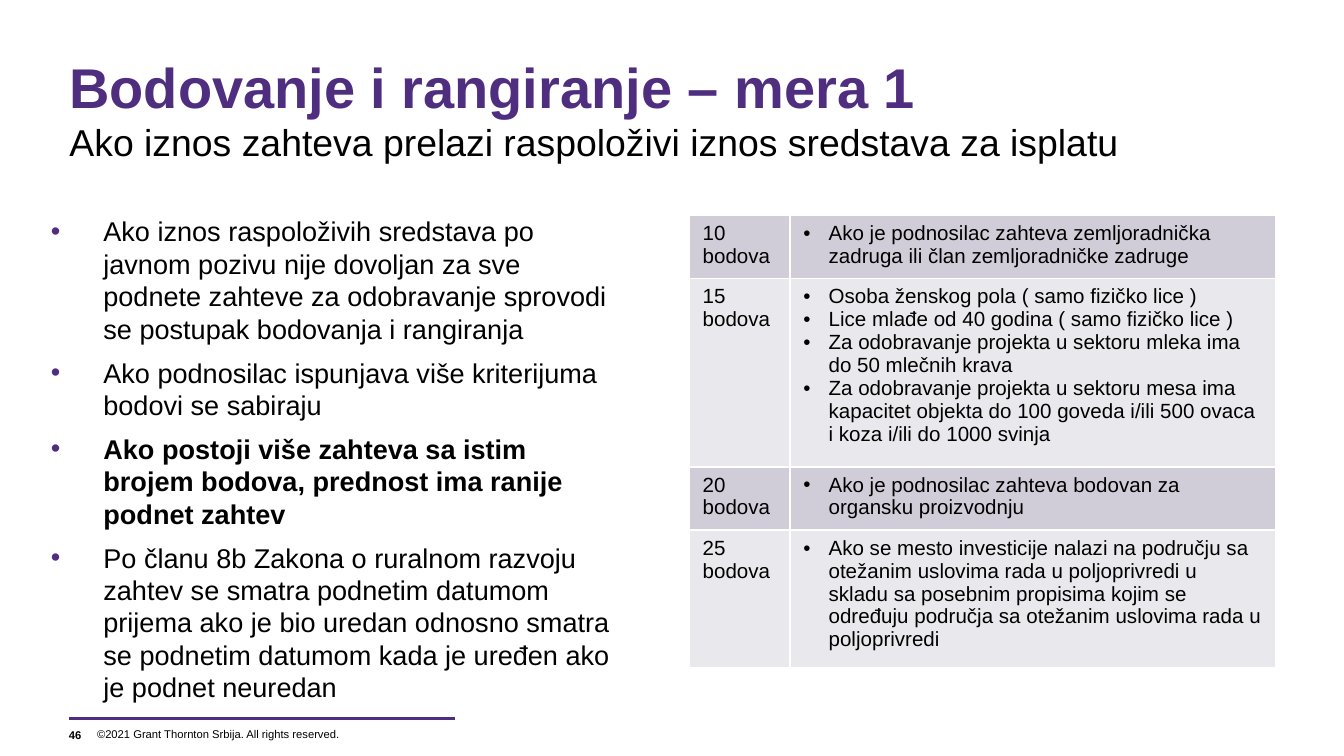
import pptx
import pptx.dml.color
import pptx.enum.shapes
import pptx.enum.text
import pptx.oxml
import pptx.oxml.ns
import pptx.util
from dataclasses import dataclass
from typing import Any

Pt = pptx.util.Pt
ANCHOR = pptx.enum.text.MSO_ANCHOR
FONT = "Arial"
PURPLE, BLACK, WHITE = "4F2D7F", "000000", "FFFFFF"
BANDS = ("D0CDD8", "E9E8EC")


@dataclass
class Box:
    left: float
    top: float
    width: float
    height: float

    def lengths(self) -> list[int]:
        return [Pt(n) for n in (self.left, self.top, self.width, self.height)]


@dataclass
class Point:
    text: str
    bold: bool = False


@dataclass
class Score:
    label: str
    rules: list[str]
    height: float


POINTS = [
    Point("Ako iznos raspoloživih sredstava po javnom pozivu nije dovoljan za sve "
          "podnete zahteve za odobravanje sprovodi se postupak bodovanja i rangiranja"),
    Point("Ako podnosilac ispunjava više kriterijuma bodovi se sabiraju"),
    Point("Ako postoji više zahteva sa istim brojem bodova, prednost ima ranije "
          "podnet zahtev", True),
    Point("Po članu 8b Zakona o ruralnom razvoju zahtev se smatra podnetim datumom "
          "prijema ako je bio uredan odnosno smatra se podnetim datumom kada je uređen "
          "ako je podnet neuredan"),
]

SCORES = [
    Score("10 bodova", ["Ako je podnosilac zahteva zemljoradnička zadruga ili član "
                        "zemljoradničke zadruge"], 33.9),
    Score("15 bodova", ["Osoba ženskog pola ( samo fizičko lice )",
                        "Lice mlađe od 40 godina ( samo fizičko lice )",
                        "Za odobravanje projekta u sektoru mleka ima do 50 mlečnih krava",
                        "Za odobravanje projekta u sektoru mesa ima kapacitet objekta do "
                        "100 goveda i/ili 500 ovaca i koza i/ili do 1000 svinja"], 100.8),
    Score("20 bodova", ["Ako je podnosilac zahteva bodovan za organsku proizvodnju"], 33.9),
    Score("25 bodova", ["Ako se mesto investicije nalazi na području sa otežanim uslovima "
                        "rada u poljoprivredi u skladu sa posebnim propisima kojim se "
                        "određuju područja sa otežanim uslovima rada u poljoprivredi"], 74),
]


def color(code: str) -> pptx.dml.color.RGBColor:
    return pptx.dml.color.RGBColor.from_string(code)


def style(run: Any, size: float, code: str = BLACK, bold: bool = False) -> None:
    run.font.name = FONT
    run.font.size = Pt(size)
    run.font.bold = bold
    run.font.color.rgb = color(code)


def add(parent: Any, tag: str, **attrs: str) -> Any:
    node = pptx.oxml.parse_xml(f'<{tag} {pptx.oxml.ns.nsdecls("a")}/>')
    for name, value in attrs.items():
        node.set(name, value)
    parent.append(node)
    return node


def bullet(para: Any, indent: float, code: str) -> None:
    props = para._p.get_or_add_pPr()
    props.set("marL", str(Pt(indent)))
    props.set("indent", str(-Pt(indent)))
    add(add(props, "a:buClr"), "a:srgbClr", val=code)
    add(props, "a:buFont", typeface=FONT)
    add(props, "a:buChar", char="•")


def add_text(slide: Any, box: Box, text: str, inset: tuple[float, float] = (0, 0),
             anchor: Any = ANCHOR.TOP) -> Any:
    frame = slide.shapes.add_textbox(*box.lengths()).text_frame
    frame.word_wrap = True
    frame.margin_left = frame.margin_right = Pt(inset[0])
    frame.margin_top = frame.margin_bottom = Pt(inset[1])
    frame.vertical_anchor = anchor
    frame.text = text
    return frame


def add_points(slide: Any, box: Box, points: list[Point]) -> None:
    text = "\n".join(point.text for point in points)
    frame = add_text(slide, box, text, (7.2, 3.6))
    for para, point in zip(frame.paragraphs, points):
        bullet(para, 28.1, PURPLE)
        para.space_after = Pt(6)
        style(para.runs[0], 14.5, bold=point.bold)


def fill_cell(cell: Any, text: str, band: str, listed: bool) -> None:
    cell.text_frame.text = text
    for para in cell.text_frame.paragraphs:
        if listed:
            bullet(para, 13.5, BLACK)
        style(para.runs[0], 11)
    # White borders come before the fill in the cell properties
    props = cell._tc.get_or_add_tcPr()
    for side in ("a:lnL", "a:lnR", "a:lnT", "a:lnB"):
        line = add(props, side, w=str(Pt(1)))
        add(add(line, "a:solidFill"), "a:srgbClr", val=WHITE)
    cell.fill.solid()
    cell.fill.fore_color.rgb = color(band)


def add_scores(slide: Any, box: Box, scores: list[Score]) -> None:
    table = slide.shapes.add_table(len(scores), 2, *box.lengths()).table
    table.first_row = table.horz_banding = False
    table.columns[0].width = Pt(54)
    table.columns[1].width = Pt(box.width - 54)
    for row, score in enumerate(scores):
        table.rows[row].height = Pt(score.height)
        band = BANDS[row % 2]
        fill_cell(table.cell(row, 0), score.label, band, False)
        fill_cell(table.cell(row, 1), "\n".join(score.rules), band, True)


def add_rule(slide: Any, left: float, right: float, top: float) -> None:
    kind = pptx.enum.shapes.MSO_CONNECTOR.STRAIGHT
    rule = slide.shapes.add_connector(kind, Pt(left), Pt(top), Pt(right), Pt(top))
    rule.line.color.rgb = color(PURPLE)
    rule.line.width = Pt(1.5)
    add(rule._element.spPr, "a:effectLst")


def main() -> None:
    deck = pptx.Presentation()
    deck.slide_width, deck.slide_height = Pt(720), Pt(405)
    slide = deck.slides.add_slide(deck.slide_layouts[6])

    # Footer
    note = add_text(slide, Box(52, 386, 190, 14.4),
                    "©2021 Grant Thornton Srbija. All rights reserved.",
                    (0, 3.6), ANCHOR.MIDDLE)
    style(note.paragraphs[0].runs[0], 6)
    add_rule(slide, 36.9, 244, 385)
    page = add_text(slide, Box(36.9, 386.6, 14.4, 14.4), "46", anchor=ANCHOR.MIDDLE)
    style(page.paragraphs[0].runs[0], 6, bold=True)

    # Title and subtitle
    title = add_text(slide, Box(37.2, 28.1, 646, 66.2),
                     "Bodovanje i rangiranje – mera 1\v"
                     "Ako iznos zahteva prelazi raspoloživi iznos sredstava za isplatu")
    head, sub = title.paragraphs[0].runs
    style(head, 30, PURPLE, True)
    style(sub, 20)

    # Scoring table and rules
    add_scores(slide, Box(369.2, 115.4, 314, 242.6), SCORES)
    add_points(slide, Box(20.2, 111.6, 314, 276.5), POINTS)
    deck.save("out.pptx")


if __name__ == "__main__":
    main()
